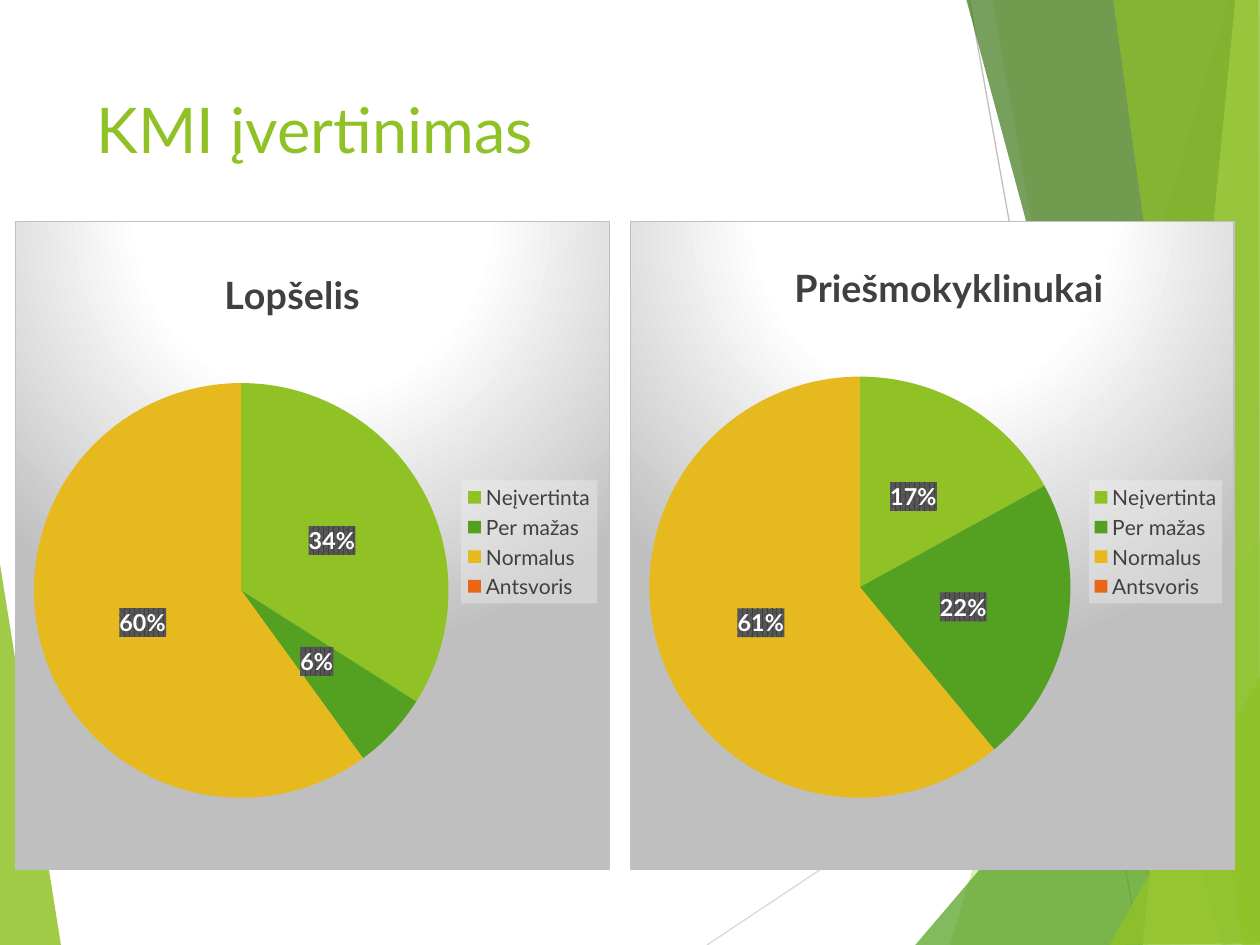
from dataclasses import dataclass

from pptx import Presentation
from pptx.chart.data import CategoryChartData
from pptx.dml.color import RGBColor
from pptx.enum import chart as ch, text
from pptx.enum.shapes import MSO_CONNECTOR
from pptx.oxml import parse_xml
from pptx.oxml.ns import nsdecls, qn
from pptx.util import Pt


@dataclass(frozen=True)
class Theme:
    font: str = "Lato"
    lime: str = "90C226"
    green: str = "54A021"
    dark_green: str = "3F7819"
    pale_lime: str = "C0E474"
    gold: str = "E6B91E"
    orange: str = "E76618"
    white: str = "FFFFFF"
    gray: str = "BFBFBF"
    light_gray: str = "D9D9D9"
    legend_fill: str = "F2F2F2"
    ink: str = "404040"
    ink_light: str = "595959"
    title_size: float = 36
    chart_title_size: float = 21.6
    legend_size: float = 12
    label_size: float = 13.3


T = Theme()
rgb = RGBColor.from_string


def set_font(font, size, color, bold=False):
    font.name, font.size, font.bold = T.font, Pt(size), bold
    font.color.rgb = rgb(color)


def set_layout(el, index, box, target=""):
    """Place a chart part by fractions of the chart's size."""
    for old in el.findall(qn("c:layout")):
        el.remove(old)
    modes = "".join(f'<c:{k}Mode val="edge"/>' for k in "xy")
    sizes = "".join(f'<c:{k} val="{v}"/>' for k, v in zip("xywh", box))
    el.insert(index, parse_xml(
        f'<c:layout {nsdecls("c")}><c:manualLayout>{target}{modes}{sizes}'
        '</c:manualLayout></c:layout>'))


prs = Presentation()
prs.slide_width, prs.slide_height = Pt(720), Pt(540)
s = prs.slides.add_slide(prs.slide_layouts[5])

# Thin background lines
for x1, y1, x2, y2, color in [(404, 540, 721, 329, T.light_gray),
                              (554, 0, 651, 540, T.gray)]:
    line = s.shapes.add_connector(MSO_CONNECTOR.STRAIGHT, Pt(x1), Pt(y1), Pt(x2), Pt(y2))
    line.line.color.rgb = rgb(color)
    line.line.width = Pt(0.75)
    line._element.spPr.append(parse_xml(f'<a:effectLst {nsdecls("a")}/>'))

# Translucent facets: colour, opacity in percent, corners
facets = [
    (T.lime, 85, [(-1, 316), (35, 541), (-1, 540)]),
    (T.lime, 30, [(702, 0), (543, 540), (721, 541), (721, 1)]),
    (T.lime, 20, [(567, -1), (662, 540), (721, 540), (721, -1)]),
    (T.green, 72, [(523, 540), (720, 309), (721, 540)]),
    (T.dark_green, 70, [(552, -1), (698, 540), (721, 539), (721, -1)]),
    (T.pale_lime, 70, [(706, -1), (653, 540), (721, 540), (720, -1)]),
    (T.lime, 65, [(636, -1), (710, 540), (720, 540), (719, -1)]),
    (T.lime, 80, [(634, 540), (721, 385), (721, 539)]),
]
for color, opacity, corners in facets:
    points = [(Pt(x), Pt(y)) for x, y in corners]
    builder = s.shapes.build_freeform(*points[0])
    builder.add_line_segments(points[1:], close=True)
    sp = builder.convert_to_shape()
    sp.shadow.inherit = False
    sp.line.fill.background()
    sp.fill.solid()
    sp.fill.fore_color.rgb = rgb(color)
    clr = sp._element.spPr.find(".//" + qn("a:srgbClr"))
    clr.append(parse_xml(f'<a:alpha {nsdecls("a")} val="{opacity * 1000}"/>'))

# Title, in front of the facets
title = s.shapes.title
s.shapes._spTree.append(title._element)
title.left, title.top, title.width, title.height = Pt(48), Pt(48), Pt(500), Pt(104)
tf = title.text_frame
tf.text = "KMI įvertinimas"
tf.word_wrap = True
tf.auto_size = text.MSO_AUTO_SIZE.NONE
tf.vertical_anchor = text.MSO_ANCHOR.TOP
p = tf.paragraphs[0]
p.alignment = text.PP_ALIGN.LEFT
set_font(p.runs[0].font, T.title_size, T.lime)

# Fills for the chart area, the legend and the labels
stops = "".join(f'<a:gs pos="{pos * 1000}"><a:srgbClr val="{c}"/></a:gs>'
                for pos, c in [(0, T.white), (39, T.white), (100, T.gray)])
area_style = (
    f'<a:gradFill><a:gsLst>{stops}</a:gsLst><a:path path="circle">'
    '<a:fillToRect l="50000" t="-80000" r="50000" b="180000"/></a:path></a:gradFill>'
    f'<a:ln w="9525"><a:solidFill><a:srgbClr val="{T.gray}"/></a:solidFill></a:ln>')
legend_style = (f'<a:solidFill><a:srgbClr val="{T.legend_fill}"><a:alpha val="39000"/>'
                '</a:srgbClr></a:solidFill><a:ln><a:noFill/></a:ln>')
label_style = (f'<a:pattFill prst="pct75"><a:fgClr><a:srgbClr val="{T.ink}"/></a:fgClr>'
               f'<a:bgClr><a:srgbClr val="{T.ink_light}"/></a:bgClr></a:pattFill>'
               '<a:ln><a:noFill/></a:ln>')

# Pie charts: name, left, width, values, then title, pie and legend boxes
categories = ["Neįvertinta", "Per mažas", "Normalus", "Antsvoris"]
slice_colors = [T.lime, T.green, T.gold, T.orange]
pies = [
    ("Lopšelis", 8.6, 340, (34, 6, 60, 0),
     (0.34, 0.06), (0.03, 0.25, 0.7, 0.64), (0.75, 0.4, 0.23, 0.19)),
    ("Priešmokyklinukai", 360, 345.6, (17, 22, 61, 0),
     (0.26, 0.05), (0.03, 0.24, 0.7, 0.65), (0.76, 0.4, 0.22, 0.19)),
]
for name, left, width, values, title_box, pie_box, legend_box in pies:
    data = CategoryChartData()
    data.categories = categories
    data.add_series("Series 1", values)
    chart = s.shapes.add_chart(ch.XL_CHART_TYPE.PIE, Pt(left), Pt(126),
                               Pt(width), Pt(371), data).chart
    set_font(chart.font, 10, "000000")

    # Chart title
    chart.has_title = True
    p = chart.chart_title.text_frame.paragraphs[0]
    p.text = name
    set_font(p.runs[0].font, T.chart_title_size, T.ink, bold=True)
    title_el = chart.chart_title._element
    set_layout(title_el, 1, title_box)
    title_el.find(qn("c:overlay")).set("val", "1")

    # Slices
    plot = chart.plots[0]
    plot.vary_by_categories = True
    series = plot.series[0]
    for i, color in enumerate(slice_colors):
        fmt = series.points[i].format
        fmt.fill.solid()
        fmt.fill.fore_color.rgb = rgb(color)
        fmt.line.fill.background()
    set_layout(chart._chartSpace.chart.plotArea, 0, pie_box,
               '<c:layoutTarget val="inner"/>')

    # Percent labels, none on the empty slice
    labels = series.data_labels
    labels.show_percentage, labels.show_value = True, False
    labels.number_format, labels.number_format_is_linked = "0%", False
    labels.position = ch.XL_LABEL_POSITION.CENTER
    set_font(labels.font, T.label_size, T.white, bold=True)
    labels._element.insert(0, parse_xml(
        f'<c:dLbl {nsdecls("c")}><c:idx val="3"/><c:delete val="1"/></c:dLbl>'))

    # Legend
    chart.has_legend = True
    legend = chart.legend
    legend.position = ch.XL_LEGEND_POSITION.RIGHT
    legend.include_in_layout = False
    set_font(legend.font, T.legend_size, T.ink)
    set_layout(legend._element, 1, legend_box)

    for el, style in [(chart._chartSpace, area_style), (legend._element, legend_style),
                      (labels._element, label_style)]:
        el.find(qn("c:txPr")).addprevious(
            parse_xml(f'<c:spPr {nsdecls("c", "a")}>{style}</c:spPr>'))

prs.save("out.pptx")
